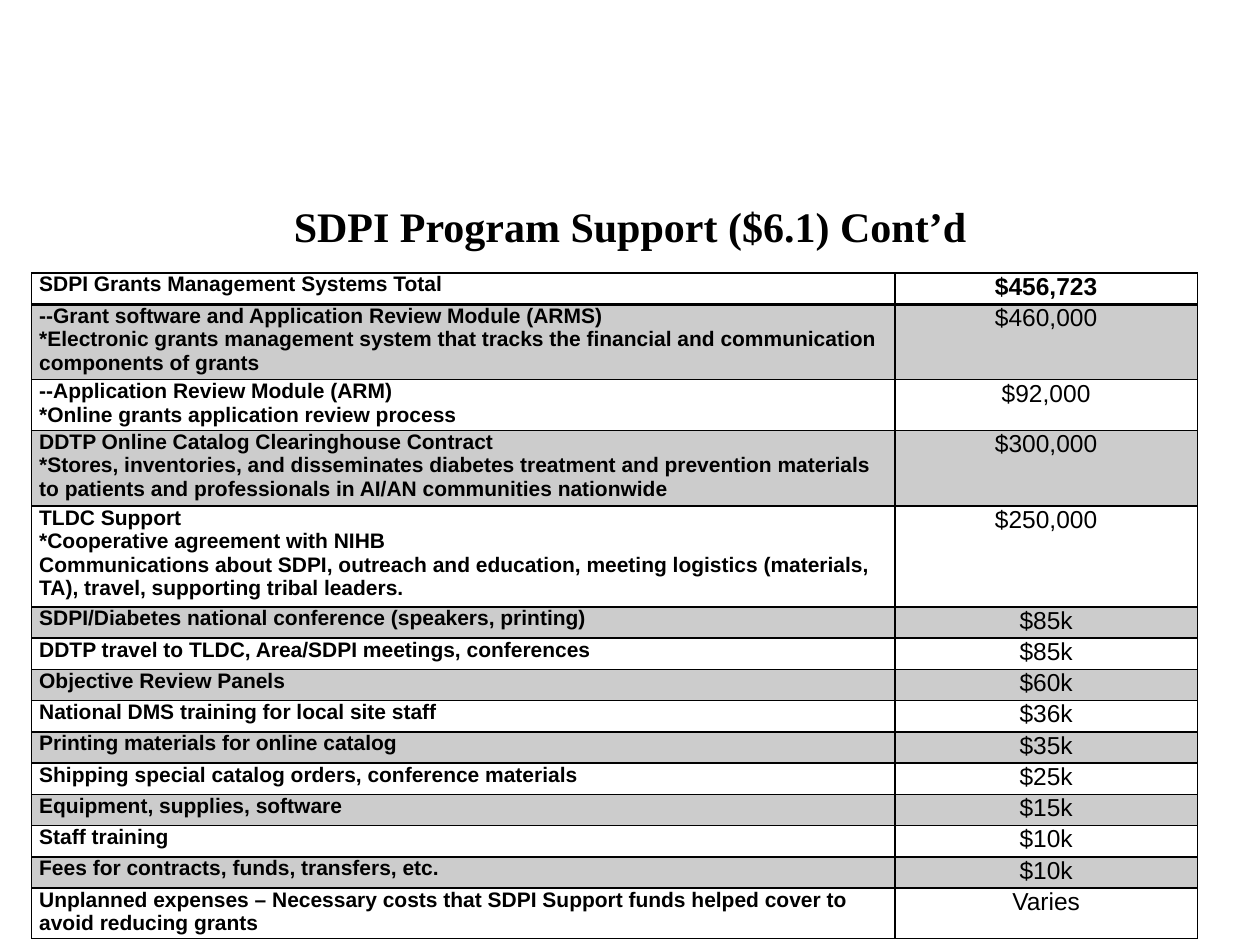
from dataclasses import dataclass

from lxml.etree import SubElement
from pptx import Presentation
from pptx.dml.color import RGBColor
from pptx.enum.text import MSO_ANCHOR, PP_ALIGN
from pptx.oxml import parse_xml
from pptx.oxml.ns import nsdecls, qn
from pptx.util import Cm, Pt


@dataclass(frozen=True)
class Theme:
    ink: str = "000000"
    band_opacity: int = 20
    title_font: str = "Times New Roman"
    body_font: str = "Arial"
    title_size: int = 24
    item_size: int = 12
    amount_size: int = 14
    rule: int = 1
    header_rule: int = 2


# Row heights by number of text lines
ROW_HEIGHTS = {1: 0.63, 2: 1.02, 3: 1.51, 4: 2.03}

# Each row: text lines, item paragraphs, amount
BUDGET = [
    (1, ["SDPI Grants Management Systems Total"], "$456,723"),
    (3, ["--Grant software and Application Review Module (ARMS)",
         "*Electronic grants management system that tracks the financial and "
         "communication components of grants"], "$460,000"),
    (2, ["--Application Review Module (ARM)",
         "*Online grants application review process"], "$92,000"),
    (3, ["DDTP Online Catalog Clearinghouse Contract",
         "*Stores, inventories, and disseminates diabetes treatment and prevention "
         "materials to patients and professionals in AI/AN communities nationwide"],
     "$300,000"),
    (4, ["TLDC Support",
         "*Cooperative agreement with NIHB",
         "Communications about SDPI, outreach and education, meeting logistics "
         "(materials, TA), travel, supporting tribal leaders."], "$250,000"),
    (1, ["SDPI/Diabetes national conference (speakers, printing)"], "$85k"),
    (1, ["DDTP travel to TLDC, Area/SDPI meetings, conferences"], "$85k"),
    (1, ["Objective Review Panels"], "$60k"),
    (1, ["National DMS training for local site staff"], "$36k"),
    (1, ["Printing materials for online catalog"], "$35k"),
    (1, ["Shipping special catalog orders, conference materials"], "$25k"),
    (1, ["Equipment, supplies, software"], "$15k"),
    (1, ["Staff training"], "$10k"),
    (1, ["Fees for contracts, funds, transfers, etc."], "$10k"),
    (2, ["Unplanned expenses – Necessary costs that SDPI Support funds helped "
         "cover to avoid reducing grants"], "Varies"),
]


def write_text(frame, lines, *, font, size, color, bold=False, align=PP_ALIGN.LEFT):
    """Write one paragraph per line, all in the same format."""
    frame.word_wrap = True
    for index, line in enumerate(lines):
        para = frame.add_paragraph() if index else frame.paragraphs[0]
        para.alignment = align
        span = para.add_run()
        span.text = line
        span.font.name = font
        span.font.size = Pt(size)
        span.font.bold = bold
        span.font.color.rgb = RGBColor.from_string(color)


class SlideBuilder:
    def __init__(self, slide, theme):
        self.slide = slide
        self.theme = theme

    def title(self, text, left, top, width, height):
        box = self.slide.shapes.add_textbox(Cm(left), Cm(top), Cm(width), Cm(height))
        box.text_frame.vertical_anchor = MSO_ANCHOR.MIDDLE
        write_text(box.text_frame, [text], font=self.theme.title_font,
                   size=self.theme.title_size, color=self.theme.ink,
                   bold=True, align=PP_ALIGN.CENTER)

    def budget_table(self, rows, left, top, widths):
        theme = self.theme
        heights = [ROW_HEIGHTS[count] for count, _, _ in rows]
        table = self.slide.shapes.add_table(
            len(rows), len(widths), Cm(left), Cm(top),
            Cm(sum(widths)), Cm(sum(heights))).table
        for column, width in zip(table.columns, widths):
            column.width = Cm(width)
        for index, (_, items, amount) in enumerate(rows):
            table.rows[index].height = Cm(heights[index])
            item_cell, amount_cell = table.rows[index].cells
            for cell in (item_cell, amount_cell):
                self.style_cell(cell, index)
            write_text(item_cell.text_frame, items, font=theme.body_font,
                       size=theme.item_size, color=theme.ink, bold=True)
            write_text(amount_cell.text_frame, [amount], font=theme.body_font,
                       size=theme.amount_size, color=theme.ink,
                       bold=index == 0, align=PP_ALIGN.CENTER)

    def style_cell(self, cell, row):
        theme = self.theme
        cell.margin_left = cell.margin_right = Cm(0.15)
        cell.margin_top = cell.margin_bottom = Cm(0)
        # Odd rows carry a translucent band
        if row % 2:
            cell.fill.solid()
            cell.fill.fore_color.rgb = RGBColor.from_string(theme.ink)
            color = cell._tc.tcPr.find(qn("a:solidFill"))[0]
            SubElement(color, qn("a:alpha"), val=str(theme.band_opacity * 1000))
        else:
            cell.fill.background()
        # Borders come before the fill, heavier under the header row
        rules = {"L": theme.rule, "R": theme.rule,
                 "T": theme.header_rule if row == 1 else theme.rule,
                 "B": theme.header_rule if row == 0 else theme.rule}
        for place, (side, weight) in enumerate(rules.items()):
            cell._tc.tcPr.insert(place, parse_xml(
                f'<a:ln{side} {nsdecls("a")} w="{Pt(weight)}"><a:solidFill>'
                f'<a:srgbClr val="{theme.ink}"/></a:solidFill></a:ln{side}>'))


def main():
    deck = Presentation()
    deck.slide_width, deck.slide_height = Cm(25.4), Cm(19.05)
    page = SlideBuilder(deck.slides.add_slide(deck.slide_layouts[6]), Theme())

    # Heading
    page.title("SDPI Program Support ($6.1) Cont’d", 1.27, 3.6, 22.86, 1.9)

    # Budget lines
    page.budget_table(BUDGET, 0.64, 5.5, [17.4, 6.1])

    deck.save("out.pptx")


if __name__ == "__main__":
    main()
